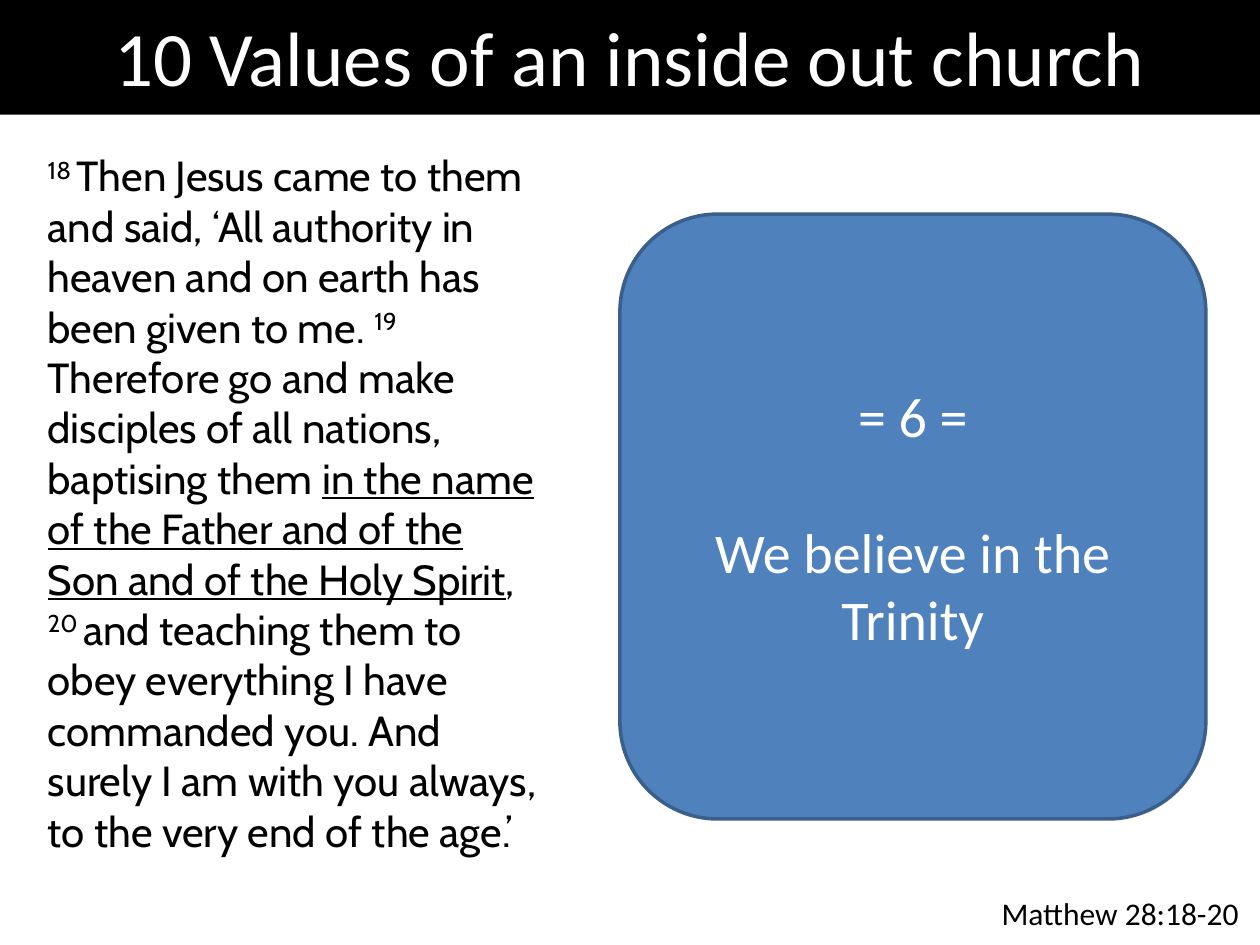
from pptx import Presentation
from pptx.dml.color import RGBColor
from pptx.enum.shapes import MSO_SHAPE
from pptx.enum.text import MSO_ANCHOR, MSO_AUTO_SIZE, PP_ALIGN
from pptx.util import Inches, Pt

RECT = MSO_SHAPE.RECTANGLE
ROUND = MSO_SHAPE.ROUNDED_RECTANGLE
MIDDLE = MSO_ANCHOR.MIDDLE
LEFT, CENTER = PP_ALIGN.LEFT, PP_ALIGN.CENTER
GROW = MSO_AUTO_SIZE.SHAPE_TO_FIT_TEXT

BLACK, WHITE = "000000", "FFFFFF"
BLUE, NAVY = "4F81BD", "3A5F8C"


def color(code):
    return RGBColor.from_string(code)


def write(para, text, size=18, font="Calibri", ink=BLACK, under=False, sup=False):
    """Add one run of text to a paragraph."""
    run = para.add_run()
    run.text = text
    run.font.size = Pt(size)
    run.font.name = font
    run.font.color.rgb = color(ink)
    if under:
        run.font.underline = True
    if sup:
        run.font._element.set("baseline", "30000")


class Deck:
    def __init__(self, width, height):
        self.show = Presentation()
        self.show.slide_width = Inches(width)
        self.show.slide_height = Inches(height)
        self.slide = self.show.slides.add_slide(self.show.slide_layouts[6])

    def label(self, box, runs, wrap=True, **style):
        """Text box with one paragraph of (text, extra format) runs."""
        frame = self.slide.shapes.add_textbox(*map(Inches, box)).text_frame
        frame.word_wrap = wrap
        frame.auto_size = GROW
        para = frame.paragraphs[0]
        para.alignment = LEFT
        for text, extra in runs:
            write(para, text, **style, **extra)

    def panel(self, kind, box, fill, lines, edge=None, gap=0, **style):
        """Filled shape with centred lines, set apart by gap points."""
        shape = self.slide.shapes.add_shape(kind, *map(Inches, box))
        shape.shadow.inherit = False
        shape.fill.solid()
        shape.fill.fore_color.rgb = color(fill)
        if edge:
            shape.line.color.rgb = color(edge)
            shape.line.width = Pt(2)
        else:
            shape.line.fill.background()
        frame = shape.text_frame
        frame.word_wrap = True
        frame.vertical_anchor = MIDDLE
        for i, text in enumerate(lines):
            para = frame.add_paragraph() if i else frame.paragraphs[0]
            para.alignment = CENTER
            para.space_before = Pt(gap if i else 0)
            write(para, text, ink=WHITE, **style)


def main():
    deck = Deck(10, 7.5)
    sup, under = {"sup": True}, {"under": True}

    # Bible passage
    verses = [
        ("18 ", sup),
        ("Then Jesus came to them and said, ‘All authority in heaven "
         "and on earth has been given to me. ", {}),
        ("19 ", sup),
        ("Therefore go and make disciples of all nations, baptising them ", {}),
        ("in the name of the Father and of the Son and of the Holy Spirit", under),
        (", ", {}),
        ("20 ", sup),
        ("and teaching them to obey everything I have commanded you. And "
         "surely I am with you always, to the very end of the age.’", {}),
    ]
    deck.label((0.28, 1.14, 4.09, 5.76), verses, size=24, font="Cabin")

    # Title band
    deck.panel(RECT, (0, -0.03, 10, 0.94), BLACK,
               ["10 Values of an inside out church"], size=44)

    # Source of the passage
    deck.label((7.85, 7.05, 2.11, 0.4), [("Matthew 28:18-20", {})], wrap=False)

    # Value card
    deck.panel(ROUND, (4.92, 1.7, 4.65, 4.8), BLUE,
               ["= 6 =", "We believe in the Trinity"], edge=NAVY, gap=39, size=32)

    deck.show.save("out.pptx")


if __name__ == "__main__":
    main()
